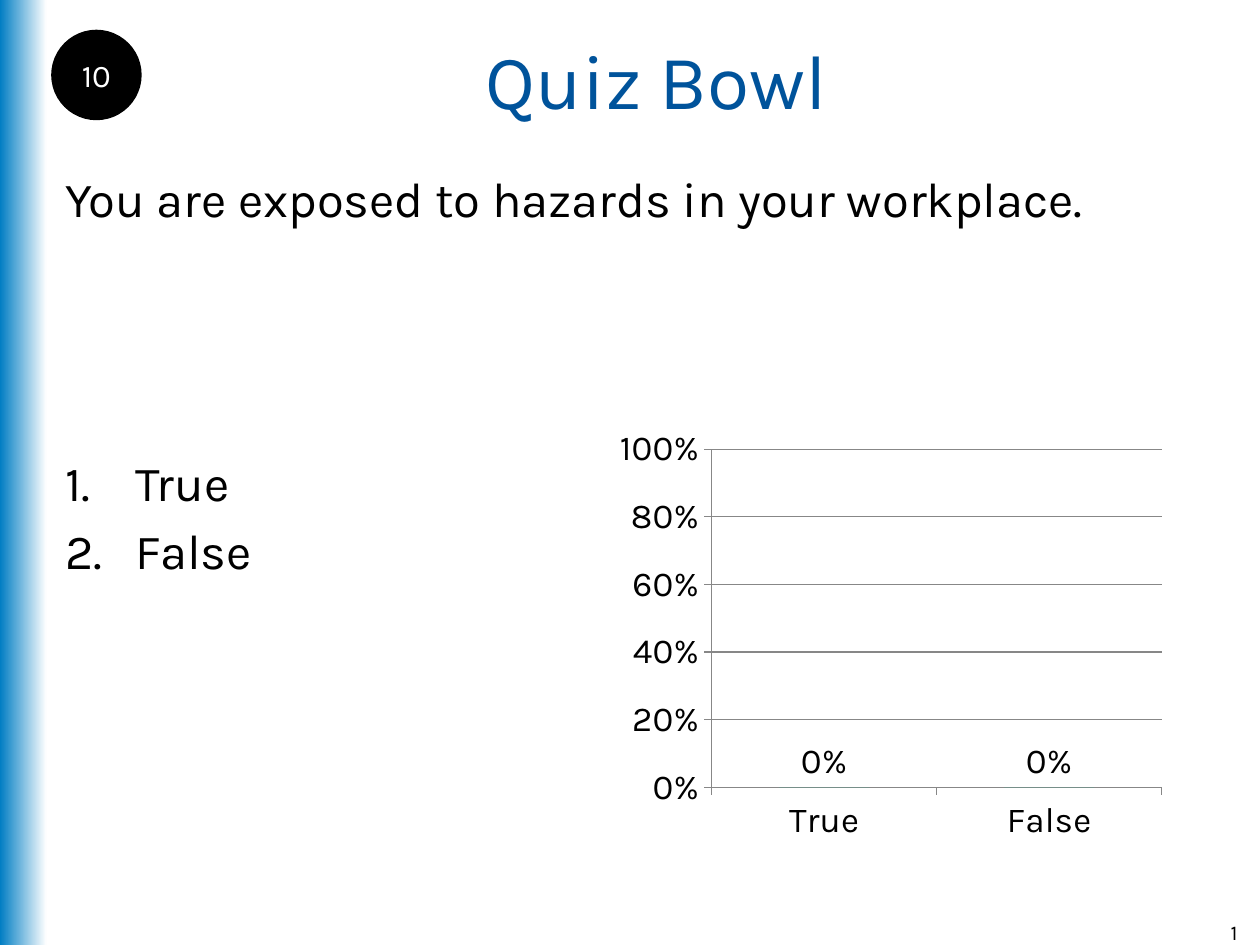
"""Build a quiz slide with a question, two answers and a vote chart."""
from lxml import etree
from pptx import Presentation
from pptx.chart.data import CategoryChartData
from pptx.dml.color import RGBColor
from pptx.enum.chart import XL_CHART_TYPE, XL_LABEL_POSITION, XL_TICK_MARK
from pptx.enum.shapes import MSO_SHAPE
from pptx.enum.text import MSO_ANCHOR, PP_ALIGN
from pptx.oxml.ns import qn
from pptx.util import Inches, Pt

LEFT, CENTER, RIGHT = PP_ALIGN.LEFT, PP_ALIGN.CENTER, PP_ALIGN.RIGHT
TOP, MIDDLE = MSO_ANCHOR.TOP, MSO_ANCHOR.MIDDLE
COLUMN = XL_CHART_TYPE.COLUMN_CLUSTERED
OUTSIDE, OUT_END = XL_TICK_MARK.OUTSIDE, XL_LABEL_POSITION.OUTSIDE_END
RECT, OVAL = MSO_SHAPE.RECTANGLE, MSO_SHAPE.OVAL
BLUE = RGBColor(0x00, 0x7D, 0xC3)
NAVY = RGBColor(0x00, 0x53, 0x9B)
GREEN = RGBColor(0x00, 0xCC, 0x99)
GRAY = RGBColor(0x87, 0x87, 0x87)
BLACK = RGBColor(0, 0, 0)
WHITE = RGBColor(255, 255, 255)
FONT = "Karla"
ANSWERS = ["True", "False"]

prs = Presentation()
prs.slide_width, prs.slide_height = Inches(10), Inches(7.5)
W, H = prs.slide_width, prs.slide_height
MARGIN = Inches(0.42)
ROW = H // 6
s = prs.slides.add_slide(prs.slide_layouts[6])


def write(tf, lines, size=28, color=BLACK, align=LEFT, anchor=TOP, numbered=False):
    tf.word_wrap = True
    tf.vertical_anchor = anchor
    for i, line in enumerate(lines):
        p = tf.paragraphs[0] if i == 0 else tf.add_paragraph()
        p.alignment = align
        if i:
            p.space_before = Pt(size * 0.2)
        if numbered:
            pPr = p._p.get_or_add_pPr()
            pPr.set("marL", str(Inches(0.56)))
            pPr.set("indent", str(-Inches(0.56)))
            etree.SubElement(pPr, qn("a:buFont")).set("typeface", "+mj-lt")
            etree.SubElement(pPr, qn("a:buAutoNum")).set("type", "arabicPeriod")
        r = p.add_run()
        r.text = line
        r.font.name, r.font.size = FONT, Pt(size)
        r.font.color.rgb = color


sp = s.shapes.add_shape(RECT, 0, 0, Inches(0.37), H)
sp.shadow.inherit = False
sp.line.fill.background()
sp.fill.gradient()
sp.fill.gradient_angle = 0
for stop, color in zip(sp.fill.gradient_stops, (BLUE, WHITE)):
    stop.color.rgb = color

sp = s.shapes.add_textbox(MARGIN, 0, W - MARGIN, ROW)
write(sp.text_frame, ["Quiz Bowl"], size=44, color=NAVY, align=CENTER, anchor=MIDDLE)

sp = s.shapes.add_textbox(Inches(9.42), H - Inches(0.25), W // 20, Inches(0.25))
write(sp.text_frame, ["1"], size=12, align=RIGHT)

sp = s.shapes.add_textbox(MARGIN, ROW + Inches(0.04), Inches(9.17), Inches(0.75))
write(sp.text_frame, ["You are exposed to hazards in your workplace."])

sp = s.shapes.add_textbox(MARGIN, Inches(3.54), Inches(4.48), Inches(3.17))
write(sp.text_frame, ANSWERS, numbered=True)

sp = s.shapes.add_shape(OVAL, MARGIN, ROW // 5, Inches(0.69), Inches(0.69))
sp.shadow.inherit = False
sp.fill.solid()
sp.fill.fore_color.rgb = BLACK
sp.line.color.rgb = BLACK
sp.line.width = Pt(2)
tf = sp.text_frame
tf.margin_left = tf.margin_right = tf.margin_top = tf.margin_bottom = 0
write(tf, ["10"], size=18, color=WHITE, align=CENTER, anchor=MIDDLE)
tf.word_wrap = False

data = CategoryChartData()
data.categories = ANSWERS
data.add_series("Series 1", [0, 0])
chart = s.shapes.add_chart(COLUMN, Inches(4.83), Inches(3.33), Inches(4.48), Inches(3.42), data).chart
chart.has_legend = chart.has_title = False
chart.font.name, chart.font.size = FONT, Pt(20)
chart.font.color.rgb = BLACK
for axis in (chart.category_axis, chart.value_axis):
    axis.major_tick_mark = OUTSIDE
    axis.format.line.color.rgb = GRAY
axis = chart.value_axis
axis.minimum_scale, axis.maximum_scale, axis.major_unit = 0, 1, 0.2
axis.has_major_gridlines = True
axis.major_gridlines.format.line.color.rgb = GRAY
axis.tick_labels.number_format = "0%"
axis.tick_labels.number_format_is_linked = False
plot = chart.plots[0]
plot.gap_width = 150
plot.vary_by_categories = False
fill = plot.series[0].format.fill
fill.solid()
fill.fore_color.rgb = GREEN
labels = plot.series[0].data_labels
labels.show_value = True
labels.number_format = "0%"
labels.number_format_is_linked = False
labels.position = OUT_END

prs.save("out.pptx")
